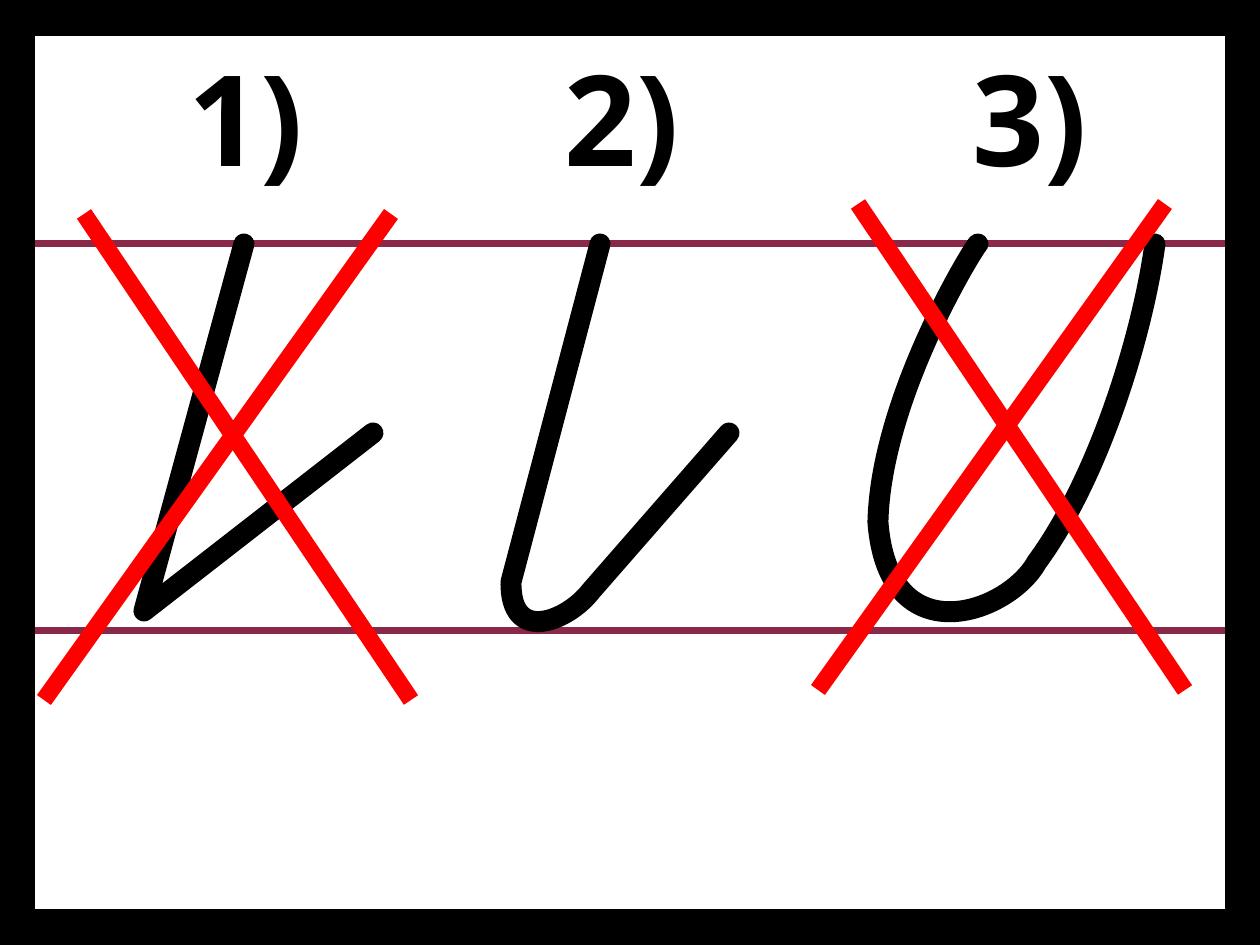
from pptx import Presentation
from pptx.dml.color import RGBColor
from pptx.enum.shapes import MSO_CONNECTOR as Connector, MSO_SHAPE as Preset
from pptx.enum.text import MSO_ANCHOR as Anchor, PP_ALIGN as Align
from pptx.oxml.ns import qn
from pptx.oxml.xmlchemy import OxmlElement
from pptx.util import Pt

EMU_PER_PX = 914400 / 126
COLORS = {"black": "000000", "paper": "FFFFFF", "rule": "8A284A", "cross": "FF0000"}
FONT = "Open Sans"


def px(length):
    return round(length * EMU_PER_PX)


def color(name):
    return RGBColor.from_string(COLORS[name])


def add_paper(slide, left, top, width, height):
    shape = slide.shapes.add_shape(Preset.RECTANGLE, px(left), px(top), px(width), px(height))
    shape.shadow.inherit = False
    shape.fill.solid()
    shape.fill.fore_color.rgb = color("paper")
    shape.line.fill.background()


def add_line(slide, start, end, color_name, width):
    line = slide.shapes.add_connector(Connector.STRAIGHT, *map(px, start + end))
    line.line.color.rgb = color(color_name)
    line.line.width = Pt(width)
    line._element.spPr.append(OxmlElement("a:effectLst"))


def add_heading(slide, text, indent, tab_stops):
    box = slide.shapes.add_textbox(px(-84), px(37), px(1449), px(158))
    frame = box.text_frame
    frame.word_wrap = True
    frame.vertical_anchor = Anchor.MIDDLE
    frame.margin_left = px(indent)
    frame.margin_right = frame.margin_top = frame.margin_bottom = 0
    paragraph = frame.paragraphs[0]
    paragraph.alignment = Align.LEFT
    tab_list = OxmlElement("a:tabLst")
    for position in tab_stops:
        tab = OxmlElement("a:tab")
        tab.set("pos", str(px(position)))
        tab.set("algn", "l")
        tab_list.append(tab)
    paragraph._p.get_or_add_pPr().append(tab_list)
    run = paragraph.add_run()
    run.text = text
    run.font.name = FONT
    run.font.size = Pt(72)
    run.font.bold = True
    run.font.color.rgb = color("black")


def add_pen_stroke(slide, start, *segments):
    """Draw segments of one point (straight) or three points (cubic curve)."""
    points = [(px(x), px(y)) for segment in segments for x, y in segment]
    builder = slide.shapes.build_freeform(px(start[0]), px(start[1]), scale=1.0)
    builder.add_line_segments(points, close=False)
    stroke = builder.convert_to_shape()
    stroke.shadow.inherit = False
    stroke.fill.background()
    stroke.line.color.rgb = color("black")
    stroke.line.width = Pt(12)

    # Join each three control points into one curve
    steps = iter(list(stroke._element.iter(qn("a:lnTo"))))
    for segment in segments:
        parts = [next(steps) for _ in segment]
        if len(parts) == 3:
            bezier = OxmlElement("a:cubicBezTo")
            parts[0].addprevious(bezier)
            for part in parts:
                bezier.append(part[0])
                part.getparent().remove(part)

    # Round pen tip and corners
    outline = stroke.line._get_or_add_ln()
    outline.set("cap", "rnd")
    outline.append(OxmlElement("a:round"))


def add_cross(slide, left, top):
    bottom = top + 486
    add_line(slide, (left + 40, top), (left + 367, bottom), "cross", 9.75)
    add_line(slide, (left + 347, top), (left, bottom), "cross", 9.75)


def main():
    presentation = Presentation()
    presentation.slide_width, presentation.slide_height = px(1260), px(945)
    slide = presentation.slides.add_slide(presentation.slide_layouts[6])
    slide.background.fill.solid()
    slide.background.fill.fore_color.rgb = color("black")

    # Paper with writing lines
    add_paper(slide, 35, 36, 1190, 873)
    for y in (244, 631):
        add_line(slide, (35, y), (1225, y), "rule", 4)

    # Numbers of the three variants
    add_heading(slide, "1)\t2)\t3)", 273, (376, 784))

    # Rounded bowl
    add_pen_stroke(slide, (978, 244),
                   [(976, 244), (881, 396), (878, 522)],
                   [(888, 656), (1008, 614), (1037, 562)],
                   [(1100, 476), (1143, 333), (1155, 244)])
    # Correct hook
    add_pen_stroke(slide, (600, 244),
                   [(511, 582)],
                   [(510, 645), (568, 621), (591, 591)],
                   [(729, 433)])
    # Sharp corner
    add_pen_stroke(slide, (244, 244), [(144, 611)], [(373, 433)])

    # Wrong variants crossed out
    add_cross(slide, 44, 214)
    add_cross(slide, 818, 204)

    presentation.save("out.pptx")


if __name__ == "__main__":
    main()
